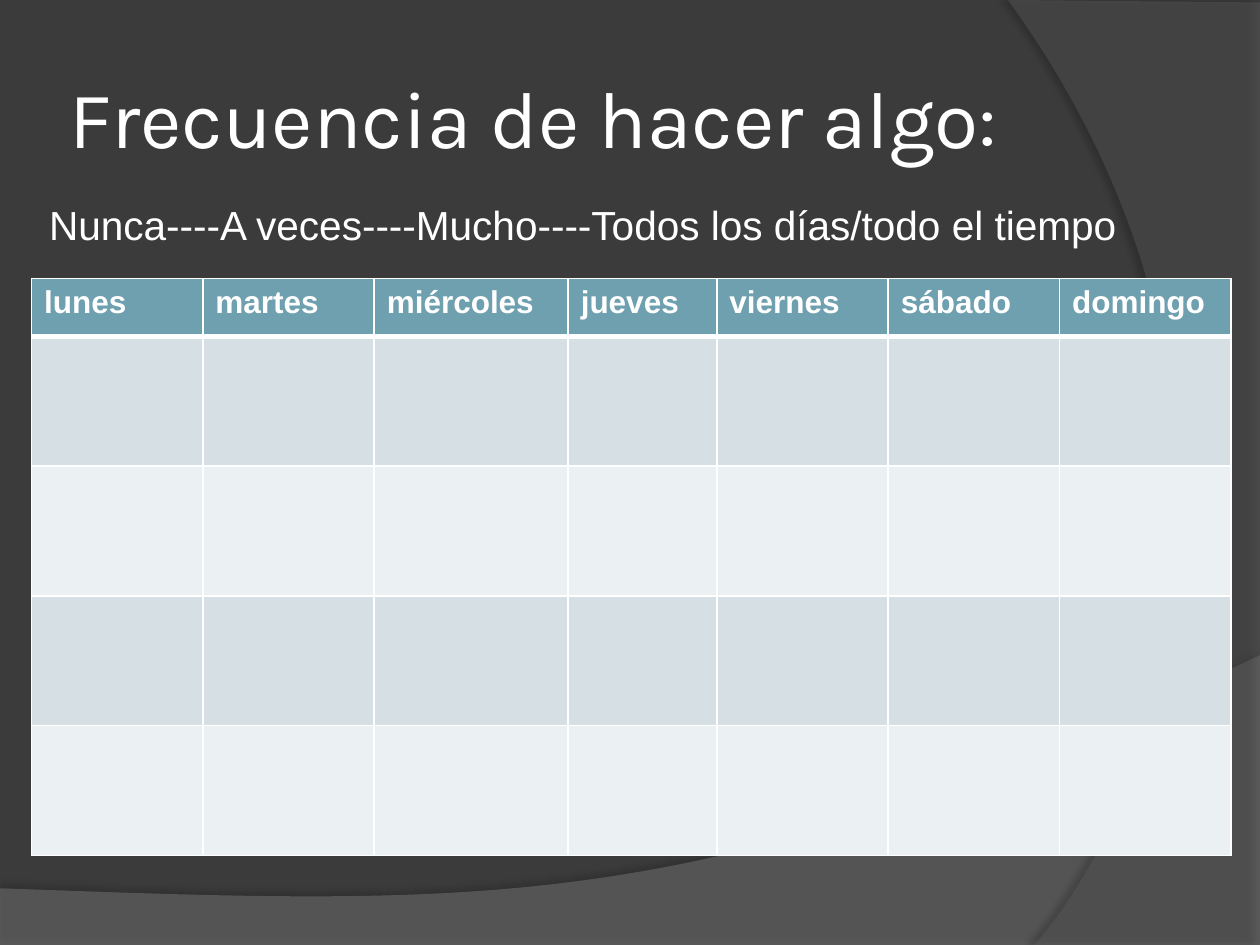
from dataclasses import dataclass

from lxml.etree import SubElement
from pptx import Presentation
from pptx.dml.color import RGBColor
from pptx.enum.text import MSO_ANCHOR
from pptx.oxml.ns import qn
from pptx.util import Emu, Pt

Point = tuple[int, int]
EMU_PER_PX = 9144  # 100 px to the inch
EMU_PER_POINT = 12700
WHITE = "FFFFFF"
DAYS = ["lunes", "martes", "miércoles", "jueves", "viernes", "sábado", "domingo"]
COLUMN_WIDTHS = [136, 136, 154, 118, 136, 136, 136]
ROW_HEIGHTS = [46] + [103] * 4
HEADER_FILL = "6EA0B0"
BAND_FILLS = ["EBF0F2", "D5DFE4"]


@dataclass
class Wave:
    before: list[Point]
    curve: list[Point]  # start, two controls, end
    fill: str
    opacity: int
    shadow_opacity: int
    shadow_distance: float
    shadow_angle: int


@dataclass
class Label:
    text: str
    frame: tuple[int, int, int, int]
    font: str
    size: float
    inset: tuple[int, int]
    anchor: MSO_ANCHOR
    space_before: float = 0


WAVES = [
    Wave([(0, 705), (0, 751), (1000, 751)],
         [(1000, 520), (559, 729), (391, 719), (0, 705)],
         "7F7F7F", 45, 35, 3.5, 270),
    Wave([(1000, 2), (1000, 750)],
         [(821, 750), (935, 619), (1018, 300), (800, 0)],
         "5E5E5E", 40, 45, 4, 180),
]
LABELS = [
    Label("Frecuencia de hacer algo:", (50, 30, 817, 125), "Karla", 46,
          (5, 5), MSO_ANCHOR.MIDDLE),
    Label("Nunca----A veces----Mucho----Todos los días/todo el tiempo",
          (25, 154, 967, 67), "Arial", 23.2, (14, 5), MSO_ANCHOR.TOP, 4),
]


def px(length: float) -> Emu:
    return Emu(round(length * EMU_PER_PX))


def color(value: str) -> RGBColor:
    return RGBColor.from_string(value)


def paint(fill, value: str) -> None:
    fill.solid()
    fill.fore_color.rgb = color(value)


def add_alpha(color_element, percent: int) -> None:
    SubElement(color_element, qn("a:alpha"), val=str(percent * 1000))


def bezier(points: list[Point], steps: int = 60) -> list[tuple[float, float]]:
    weights = [((1 - t) ** 3, 3 * t * (1 - t) ** 2, 3 * t * t * (1 - t), t ** 3)
               for t in (step / steps for step in range(steps + 1))]
    return [(sum(w * p[0] for w, p in zip(row, points)),
             sum(w * p[1] for w, p in zip(row, points))) for row in weights]


def draw_wave(page, wave: Wave) -> None:
    outline = [(px(x), px(y)) for x, y in wave.before + bezier(wave.curve)]
    builder = page.shapes.build_freeform(*outline[0], scale=1.0)
    builder.add_line_segments(outline[1:], close=True)
    shape = builder.convert_to_shape()
    shape.shadow.inherit = False
    shape.line.fill.background()
    paint(shape.fill, wave.fill)
    properties = shape._element.spPr
    add_alpha(properties.find(f"{qn('a:solidFill')}/{qn('a:srgbClr')}"), wave.opacity)
    shadow = SubElement(
        properties.find(qn("a:effectLst")), qn("a:outerShdw"),
        blurRad=str(4 * EMU_PER_POINT),
        dist=str(round(wave.shadow_distance * EMU_PER_POINT)),
        dir=str(wave.shadow_angle * 60000), algn="ctr", rotWithShape="0")
    add_alpha(SubElement(shadow, qn("a:srgbClr"), val="000000"), wave.shadow_opacity)


def style_text(paragraph, font: str, size: float, bold: bool = False) -> None:
    for span in paragraph.runs:
        span.font.name = font
        span.font.size = Pt(size)
        span.font.bold = bold
        span.font.color.rgb = color(WHITE)


def draw_label(page, label: Label) -> None:
    box = page.shapes.add_textbox(*map(px, label.frame))
    frame = box.text_frame
    frame.word_wrap = True
    frame.vertical_anchor = label.anchor
    frame.margin_left = frame.margin_right = px(label.inset[0])
    frame.margin_top = frame.margin_bottom = px(label.inset[1])
    frame.text = label.text
    para = frame.paragraphs[0]
    para.space_before = Pt(label.space_before)
    style_text(para, label.font, label.size)


def add_borders(cell, top: int, bottom: int) -> None:
    properties = cell._tc.get_or_add_tcPr()
    sides = {"lnL": 1, "lnR": 1, "lnT": top, "lnB": bottom}
    for index, (side, width) in enumerate(sides.items()):
        line = SubElement(properties, qn(f"a:{side}"), w=str(width * EMU_PER_POINT))
        fill = SubElement(line, qn("a:solidFill"))
        SubElement(fill, qn("a:srgbClr"), val=WHITE)
        properties.insert(index, line)  # borders precede the fill


def draw_week(page) -> None:
    table = page.shapes.add_table(
        len(ROW_HEIGHTS), len(DAYS), px(25), px(221),
        px(sum(COLUMN_WIDTHS)), px(sum(ROW_HEIGHTS))).table
    for column, width in zip(table.columns, COLUMN_WIDTHS):
        column.width = px(width)
    for index, (row, height) in enumerate(zip(table.rows, ROW_HEIGHTS)):
        row.height = px(height)
        for cell, day in zip(row.cells, DAYS):
            paint(cell.fill, BAND_FILLS[index % 2] if index else HEADER_FILL)
            add_borders(cell, 3 if index == 1 else 1, 3 if index == 0 else 1)
            if index == 0:
                cell.text = day
                style_text(cell.text_frame.paragraphs[0], "Arial", 18, True)


def main() -> None:
    deck = Presentation()
    deck.slide_width, deck.slide_height = px(1000), px(750)
    page = deck.slides.add_slide(deck.slide_layouts[6])

    # Background and its waves
    paint(page.background.fill, "3B3B3B")
    for wave in WAVES:
        draw_wave(page, wave)

    # Title and frequency scale
    for label in LABELS:
        draw_label(page, label)

    # Weekly grid
    draw_week(page)
    deck.save("out.pptx")


if __name__ == "__main__":
    main()
